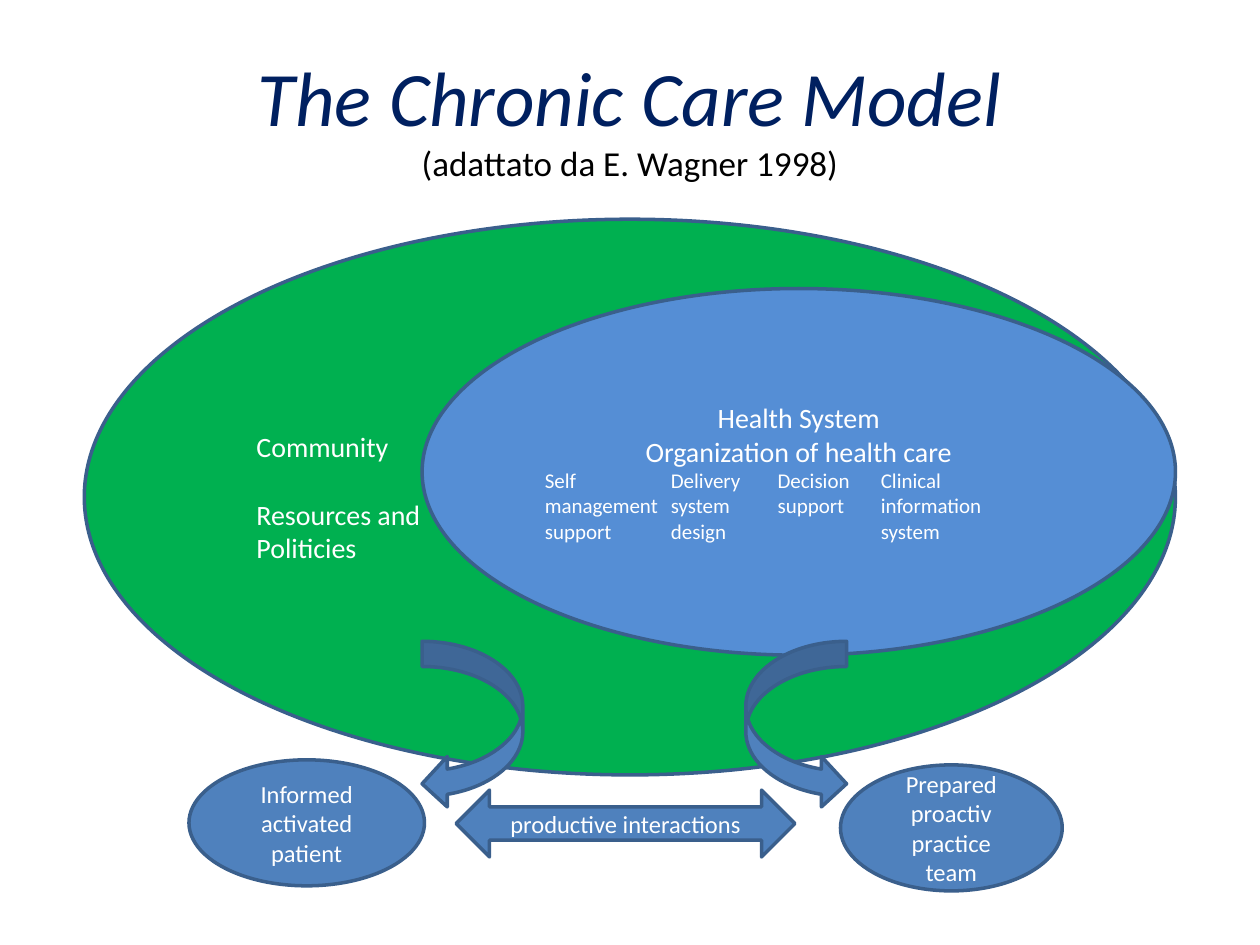
import pptx
import pptx.util
import pptx.dml.color
import pptx.enum.shapes
import pptx.enum.text
import pptx.oxml.ns
import lxml.etree

Pt = pptx.util.Pt
SHAPE = pptx.enum.shapes.MSO_SHAPE
ALIGN = pptx.enum.text.PP_ALIGN
ANCHOR = pptx.enum.text.MSO_ANCHOR

FONT = "Calibri"
WHITE, BLACK, NAVY = "FFFFFF", "000000", "002060"
GREEN, LIGHT_BLUE, BLUE, OUTLINE = "00B050", "558ED5", "4F81BD", "3A5F8C"

COMPONENT_ROWS = [
    ["Self", "Delivery", "Decision", "Clinical"],
    ["management", "system", "support", "information"],
    ["support", "design", "", "system"],
]
COMPONENT_TABS = [72, 133, 192]


def rgb(hex_color):
    return pptx.dml.color.RGBColor.from_string(hex_color)


def add_line(tf, text, size, color=WHITE, align=ALIGN.CENTER, italic=False):
    """Write text in the first paragraph if it is empty, else in a new one."""
    p = tf.paragraphs[0] if not tf.text else tf.add_paragraph()
    p.text = text
    p.alignment = align
    p.font.name = FONT
    p.font.size = Pt(size)
    p.font.italic = italic
    p.font.color.rgb = rgb(color)
    return p


def set_tabs(p, positions):
    tabs = lxml.etree.Element(pptx.oxml.ns.qn("a:tabLst"))
    for pos in positions:
        lxml.etree.SubElement(tabs, pptx.oxml.ns.qn("a:tab"), pos=str(Pt(pos)), algn="l")
    p._p.get_or_add_pPr().insert(0, tabs)


def add_shape(slide, kind, box, fill):
    sp = slide.shapes.add_shape(kind, *map(Pt, box))
    sp.shadow.inherit = False
    sp.fill.solid()
    sp.fill.fore_color.rgb = rgb(fill)
    sp.line.color.rgb = rgb(OUTLINE)
    sp.line.width = Pt(2)
    sp.text_frame.word_wrap = True
    sp.text_frame.vertical_anchor = ANCHOR.MIDDLE
    return sp


def add_title(slide, box):
    tf = slide.shapes.add_textbox(*map(Pt, box)).text_frame
    tf.word_wrap = True
    tf.vertical_anchor = ANCHOR.MIDDLE
    add_line(tf, "The Chronic Care Model", 44, NAVY, italic=True)
    add_line(tf, "(adattato da E. Wagner 1998)", 20, BLACK)


def add_community(slide, box):
    """Community ellipse, with the health system ellipse at its right edge."""
    x, y, w, h = box
    tf = add_shape(slide, SHAPE.OVAL, box, GREEN).text_frame
    add_line(tf, "Community", 16, align=ALIGN.LEFT)
    add_line(tf, "Resources and", 16, align=ALIGN.LEFT).space_before = Pt(19.5)
    add_line(tf, "Politicies", 16, align=ALIGN.LEFT)

    inner_w = 430.5
    add_health_system(slide, (x + w - inner_w, y + 39.6, inner_w, 209.5))


def add_health_system(slide, box):
    tf = add_shape(slide, SHAPE.OVAL, box, LIGHT_BLUE).text_frame
    add_line(tf, "Health System", 16)
    add_line(tf, "Organization of health care", 16)
    for row in COMPONENT_ROWS:
        p = add_line(tf, "\t".join(row), 12, align=ALIGN.LEFT)
        set_tabs(p, COMPONENT_TABS)


def add_interactions(slide, box):
    """Patient and team, the arrow between them and the curved arrows to them."""
    x, y, w, h = box
    parts = [
        (SHAPE.OVAL, (x, y + 67.7, 134.6, 72), "Informed activated patient"),
        (SHAPE.OVAL, (x + w - 126.7, y + 70.6, 126.7, 72), "Prepared proactiv practice team"),
        (SHAPE.LEFT_RIGHT_ARROW, (x + 152.6, y + 85, 193.7, 38.2), "productive interactions"),
        (SHAPE.CURVED_RIGHT_ARROW, (x + 318.2, y, 57.6, 95.8), None),
        (SHAPE.CURVED_LEFT_ARROW, (x + 133.2, y, 57.6, 95.8), None),
    ]
    for kind, part_box, text in parts:
        sp = add_shape(slide, kind, part_box, BLUE)
        if text:
            add_line(sp.text_frame, text, 14)


def main():
    prs = pptx.Presentation()
    prs.slide_width, prs.slide_height = Pt(720), Pt(540)
    slide = prs.slides.add_slide(prs.slide_layouts[6])
    add_title(slide, (36, 21.6, 648, 90))
    add_community(slide, (48.2, 125.3, 623.5, 317.5))
    add_interactions(slide, (108, 366.5, 499, 142.6))
    prs.save("out.pptx")


if __name__ == "__main__":
    main()
